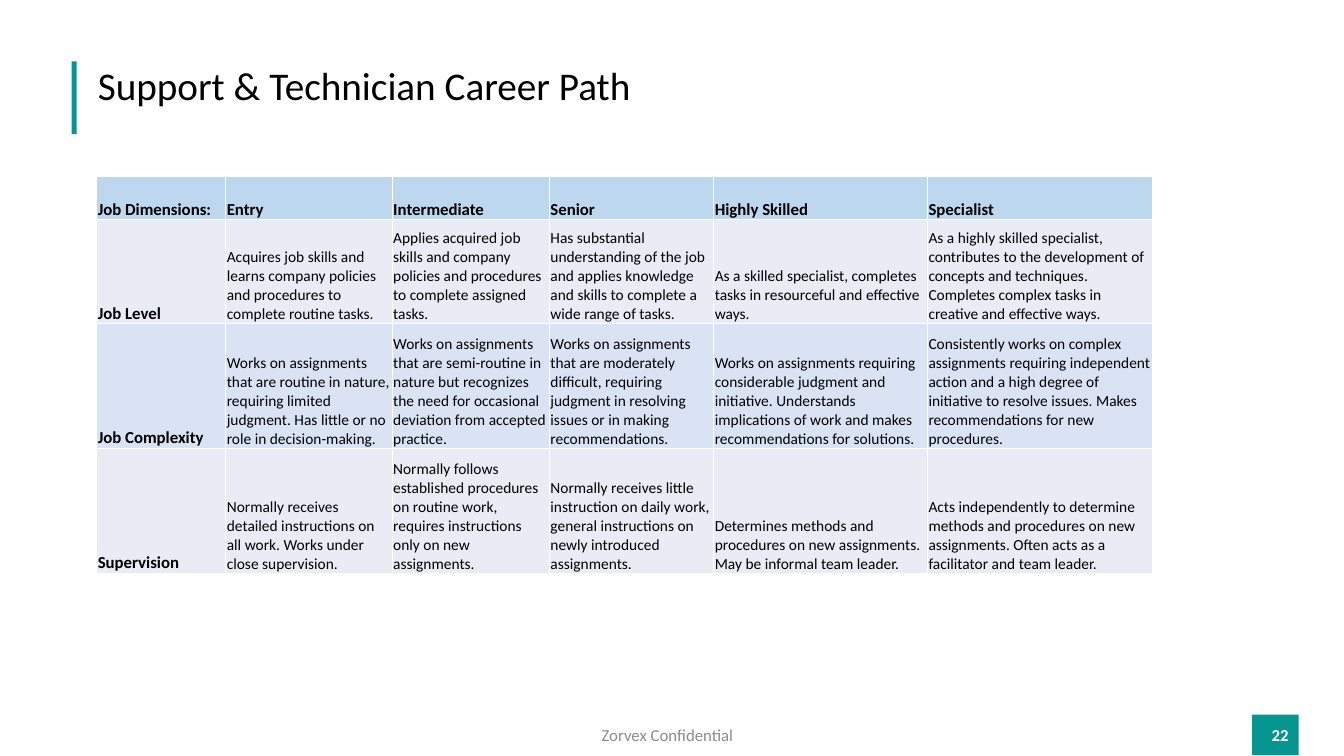
from lxml import etree
from pptx import Presentation
from pptx.dml.color import RGBColor
from pptx.enum.shapes import MSO_SHAPE
from pptx.enum.text import MSO_ANCHOR, MSO_AUTO_SIZE, PP_ALIGN
from pptx.oxml.ns import qn
from pptx.util import Pt

PX = 9144
FONT = "Calibri"
RECTANGLE = MSO_SHAPE.RECTANGLE
TOP, MIDDLE, BOTTOM = MSO_ANCHOR.TOP, MSO_ANCHOR.MIDDLE, MSO_ANCHOR.BOTTOM
LEFT, CENTER, RIGHT = PP_ALIGN.LEFT, PP_ALIGN.CENTER, PP_ALIGN.RIGHT
NO_AUTOFIT = MSO_AUTO_SIZE.NONE

COLORS = {
    "teal": "079591",
    "black": "000000",
    "white": "FFFFFF",
    "grey": "8C8C8C",
    "header": "BDD7EE",
    "light": "E9EBF5",
    "blue": "DAE3F3",
}

COLUMN_WIDTHS = [128, 165, 156, 163, 212, 223]
ROW_HEIGHTS = [43, 103, 124, 124]
ROW_FILLS = ["header", "light", "blue", "light"]
CAREER_PATH = [
    ["Job Dimensions:", "Entry", "Intermediate", "Senior", "Highly Skilled", "Specialist"],
    [
        "Job Level",
        "Acquires job skills and learns company policies and procedures to complete routine tasks.",
        "Applies acquired job skills and company policies and procedures to complete assigned tasks.",
        "Has substantial understanding of the job and applies knowledge and skills "
        "to complete a wide range of tasks.",
        "As a skilled specialist, completes tasks in resourceful and effective ways.",
        "As a highly skilled specialist, contributes to the development of concepts and techniques. "
        "Completes complex tasks in creative and effective ways.",
    ],
    [
        "Job Complexity",
        "Works on assignments that are routine in nature, requiring limited judgment. "
        "Has little or no role in decision-making.",
        "Works on assignments that are semi-routine in nature but recognizes the need "
        "for occasional deviation from accepted practice.",
        "Works on assignments that are moderately difficult, requiring judgment "
        "in resolving issues or in making recommendations.",
        "Works on assignments requiring considerable judgment and initiative. "
        "Understands implications of work and makes recommendations for solutions.",
        "Consistently works on complex assignments requiring independent action and a high degree "
        "of initiative to resolve issues. Makes recommendations for new procedures.",
    ],
    [
        "Supervision",
        "Normally receives detailed instructions on all work. Works under close supervision.",
        "Normally follows established procedures on routine work, "
        "requires instructions only on new assignments.",
        "Normally receives little instruction on daily work, "
        "general instructions on newly introduced assignments.",
        "Determines methods and procedures on new assignments. May be informal team leader.",
        "Acts independently to determine methods and procedures on new assignments. "
        "Often acts as a facilitator and team leader.",
    ],
]


def px(*lengths):
    return [length * PX for length in lengths]


def rgb(name):
    return RGBColor.from_string(COLORS[name])


def write(frame, text, size, color, bold=False, align=LEFT):
    frame.text = text
    frame.word_wrap = True
    paragraph = frame.paragraphs[0]
    paragraph.alignment = align
    font = paragraph.font
    font.name, font.size, font.bold = FONT, Pt(size), bold
    font.color.rgb = rgb(color)


def add_title(slide, text, box):
    title = slide.shapes.title
    title.left, title.top, title.width, title.height = px(*box)
    frame = title.text_frame
    write(frame, text, 28, "black")
    frame.auto_size = NO_AUTOFIT
    frame.vertical_anchor = TOP
    frame.paragraphs[0].line_spacing = 0.9


def add_block(slide, box):
    block = slide.shapes.add_shape(RECTANGLE, *px(*box))
    block.shadow.inherit = False
    block.fill.solid()
    block.fill.fore_color.rgb = rgb("teal")
    block.line.fill.background()
    return block


def add_footer(slide, text, box):
    frame = slide.shapes.add_textbox(*px(*box)).text_frame
    write(frame, text, 12, "grey", align=CENTER)
    frame.vertical_anchor = MIDDLE


def add_borders(cell):
    properties = cell._tc.get_or_add_tcPr()
    for position, side in enumerate(("lnL", "lnR", "lnT", "lnB")):
        border = etree.Element(qn(f"a:{side}"), w=str(Pt(1)))
        fill = etree.SubElement(border, qn("a:solidFill"))
        etree.SubElement(fill, qn("a:srgbClr"), val=COLORS["white"])
        properties.insert(position, border)


def fill_cell(cell, text, fill, heading):
    cell.margin_left, cell.margin_top, cell.margin_right, cell.margin_bottom = px(1, 1, 1, 0)
    cell.vertical_anchor = BOTTOM
    cell.fill.solid()
    cell.fill.fore_color.rgb = rgb(fill)
    write(cell.text_frame, text, 12 if heading else 11, "black", bold=heading)
    add_borders(cell)


def add_career_table(slide, left, top):
    box = px(left, top, sum(COLUMN_WIDTHS), sum(ROW_HEIGHTS))
    table = slide.shapes.add_table(len(ROW_HEIGHTS), len(COLUMN_WIDTHS), *box).table
    table.horz_banding = False
    for column, width in zip(table.columns, COLUMN_WIDTHS):
        column.width = width * PX
    for row, height in zip(table.rows, ROW_HEIGHTS):
        row.height = height * PX
    for r, (texts, fill) in enumerate(zip(CAREER_PATH, ROW_FILLS)):
        for c, text in enumerate(texts):
            fill_cell(table.cell(r, c), text, fill, heading=r == 0 or c == 0)


def main():
    deck = Presentation()
    deck.slide_width, deck.slide_height = px(1333, 750)
    slide = deck.slides.add_slide(deck.slide_layouts[5])
    add_block(slide, (71, 61, 5, 72))
    add_title(slide, "Support & Technician Career Path", (87, 61, 1150, 54))
    add_career_table(slide, 96, 175)
    page_number = add_block(slide, (1242, 709, 46, 40)).text_frame
    write(page_number, "22", 12, "white", bold=True, align=RIGHT)
    page_number.vertical_anchor = MIDDLE
    add_footer(slide, "Zorvex Confidential", (437, 709, 450, 40))
    deck.save("out.pptx")


if __name__ == "__main__":
    main()
